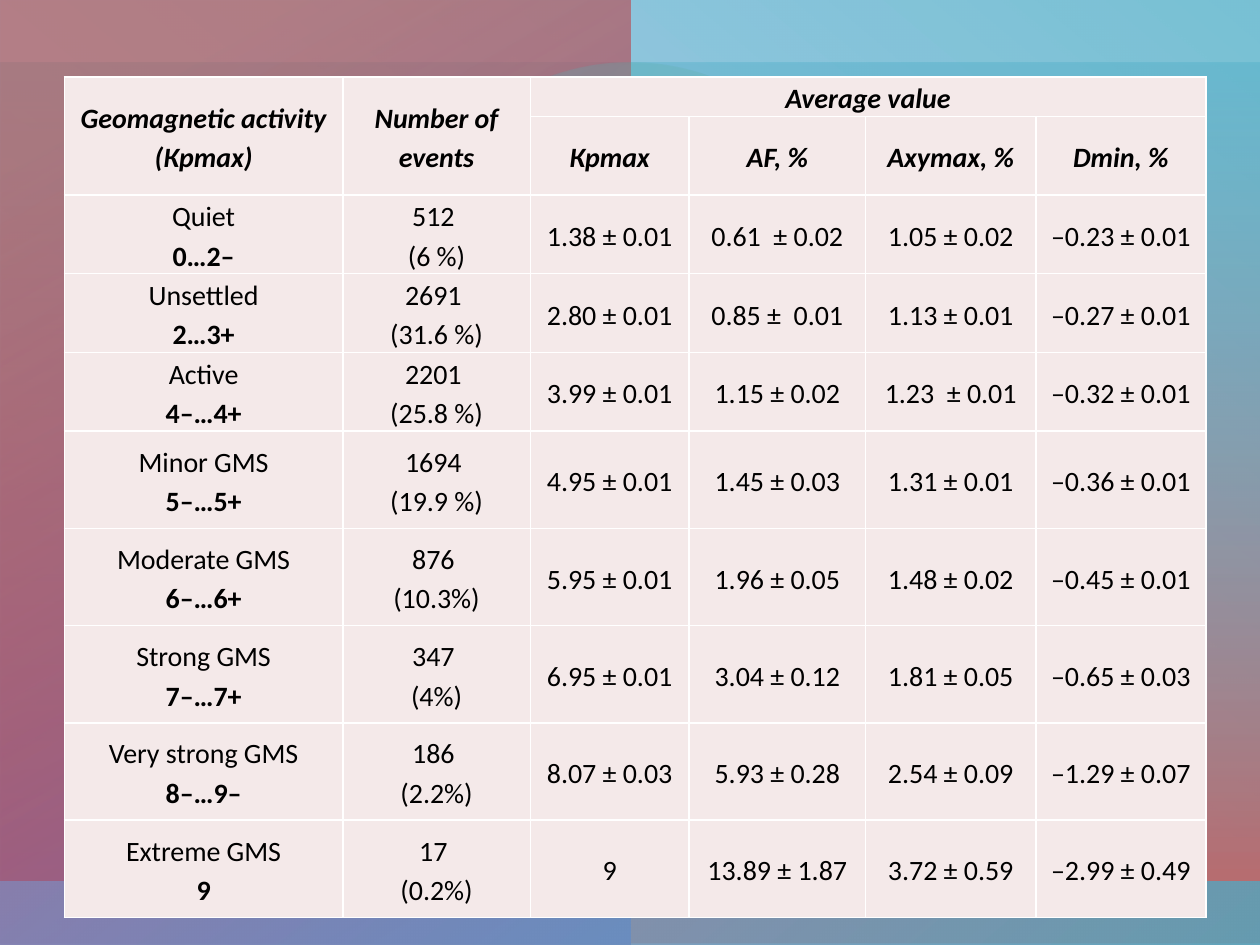
from lxml.etree import SubElement
from pptx import Presentation
from pptx.dml.color import RGBColor
from pptx.enum.shapes import MSO_SHAPE
from pptx.enum.text import MSO_ANCHOR, PP_ALIGN
from pptx.oxml.ns import qn
from pptx.util import Cm, Pt

WIDE, HIGH = 25.4, 19.05
RECT, OVAL = MSO_SHAPE.RECTANGLE, MSO_SHAPE.OVAL
SKY = [(0, "4BACC6", 75), (100, "71A1DC", 48)]
BACK = [
    (RECT, (0, 0, WIDE, HIGH), 180, True, 230, SKY),
    (RECT, (0, 1.27, WIDE, 17.78), 180, False, 270, [(0, "4BACC6", 37), (92, "C0504D", 75)]),
    (RECT, (0, 0, WIDE / 2, HIGH), 180, True, 300, [(13, "C0504D", 61), (99, "8064A2", 100)]),
    (OVAL, (5.46, 4.09, 14.48, 10.87), 270, True, 10, [(7, "B3A2C7", 3), (100, "FFFFFF", 16)]),
    (OVAL, (6.5, 1.27, 12.4, 16.51), 0, False, 30, [(7, "4BACC6", 30), (100, "9BBB59", 20)]),
    (RECT, (0, 17.78, WIDE, 1.27), 0, False, 230, SKY),
]

LEFT, TOP = 1.3, 1.55
COLS = [5.61, 3.78, 3.2, 3.56, 3.43, 3.43]
ROWS = [0.76] + [1.55] * 4 + [1.96] * 5
HEAD = [
    ["Geomagnetic activity (Крmax)", "Number of events", "Average value", "", "", ""],
    ["", "", "Крmax", "AF, %", "Axymax, %", "Dmin, %"],
]
SPANS = [((0, 0), (1, 0)), ((0, 1), (1, 1)), ((0, 2), (0, 5))]
BODY = [
    ["Quiet\n0…2–", "512 \n(6 %)", "1.38 ± 0.01", "0.61  ± 0.02", "1.05 ± 0.02", "–0.23 ± 0.01"],
    ["Unsettled\n2…3+", "2691 \n(31.6 %)", "2.80 ± 0.01", "0.85 ±  0.01", "1.13 ± 0.01", "–0.27 ± 0.01"],
    ["Active\n4–…4+", "2201 \n(25.8 %)", "3.99 ± 0.01", "1.15 ± 0.02", "1.23  ± 0.01", "–0.32 ± 0.01"],
    ["Minor GMS\n5–…5+", "1694 \n(19.9 %)", "4.95 ± 0.01", "1.45 ± 0.03", "1.31 ± 0.01", "–0.36 ± 0.01"],
    ["Moderate GMS\n6–…6+", "876 \n(10.3%)", "5.95 ± 0.01", "1.96 ± 0.05", "1.48 ± 0.02", "–0.45 ± 0.01"],
    ["Strong GMS\n7–…7+", "347 \n(4%)", "6.95 ± 0.01", "3.04 ± 0.12", "1.81 ± 0.05", "–0.65 ± 0.03"],
    ["Very strong GMS\n8–…9–", "186 \n(2.2%)", "8.07 ± 0.03", "5.93 ± 0.28", "2.54 ± 0.09", "–1.29 ± 0.07"],
    ["Extreme GMS\n9", "17 \n(0.2%)", "9", "13.89 ± 1.87", "3.72 ± 0.59", "–2.99 ± 0.49"],
]
CELL = {
    "margin_left": Cm(0.15), "margin_right": Cm(0.15),
    "margin_top": 0, "margin_bottom": 0,
    "vertical_anchor": MSO_ANCHOR.MIDDLE,
}
PARA = {"alignment": PP_ALIGN.CENTER, "line_spacing": 1.15}
FONT = {"name": "Calibri", "size": Pt(16)}


def tint(code):
    return RGBColor.from_string(code)


def apply(item, form):
    for key, val in form.items():
        setattr(item, key, val)


def add_back(slide, kind, box, turn, flip, angle, stops):
    shape = slide.shapes.add_shape(kind, *map(Cm, box))
    shape.shadow.inherit = False
    shape.line.fill.background()
    shape.rotation = turn
    props = shape._element.spPr
    if flip:
        props.find(qn("a:xfrm")).set("flipH", "1")
    shape.fill.gradient()
    shape.fill.gradient_angle = 360 - angle
    for stop, (place, code, _) in zip(shape.fill.gradient_stops, stops):
        stop.position = place / 100
        stop.color.rgb = tint(code)
    for node, (_, _, alpha) in zip(props.iter(qn("a:srgbClr")), stops):
        SubElement(node, qn("a:alpha"), val=str(alpha * 1000))


def add_edge(cell):
    props = cell._tc.get_or_add_tcPr()
    for side in ("lnL", "lnR", "lnT", "lnB"):
        line = SubElement(props, qn("a:" + side), w=str(Pt(1)))
        fill = SubElement(line, qn("a:solidFill"))
        SubElement(fill, qn("a:srgbClr"), val="FFFFFF")


def fill_cell(cell, text, row, col):
    head = row < len(HEAD)
    apply(cell, CELL)
    add_edge(cell)
    cell.fill.solid()
    cell.fill.fore_color.rgb = tint("F4E9E9")
    cell.text = text
    for num, para in enumerate(cell.text_frame.paragraphs):
        apply(para, PARA)
        bold = head or (col == 0 and num == 1)
        for font in [para.font] + [run.font for run in para.runs]:
            apply(font, {**FONT, "bold": bold, "italic": head})
            font.color.rgb = tint("000000")


def add_grid(slide):
    data = HEAD + BODY
    size = (LEFT, TOP, sum(COLS), sum(ROWS))
    grid = slide.shapes.add_table(len(ROWS), len(COLS), *map(Cm, size)).table
    for col, wide in zip(grid.columns, COLS):
        col.width = Cm(wide)
    for row, high in zip(grid.rows, ROWS):
        row.height = Cm(high)
    for row, texts in enumerate(data):
        for col, text in enumerate(texts):
            fill_cell(grid.cell(row, col), text, row, col)
    for start, end in SPANS:
        grid.cell(*start).merge(grid.cell(*end))


def main():
    deck = Presentation()
    apply(deck, {"slide_width": Cm(WIDE), "slide_height": Cm(HIGH)})
    slide = deck.slides.add_slide(deck.slide_layouts[6])
    for part in BACK:
        add_back(slide, *part)
    add_grid(slide)
    deck.save("out.pptx")


if __name__ == "__main__":
    main()
